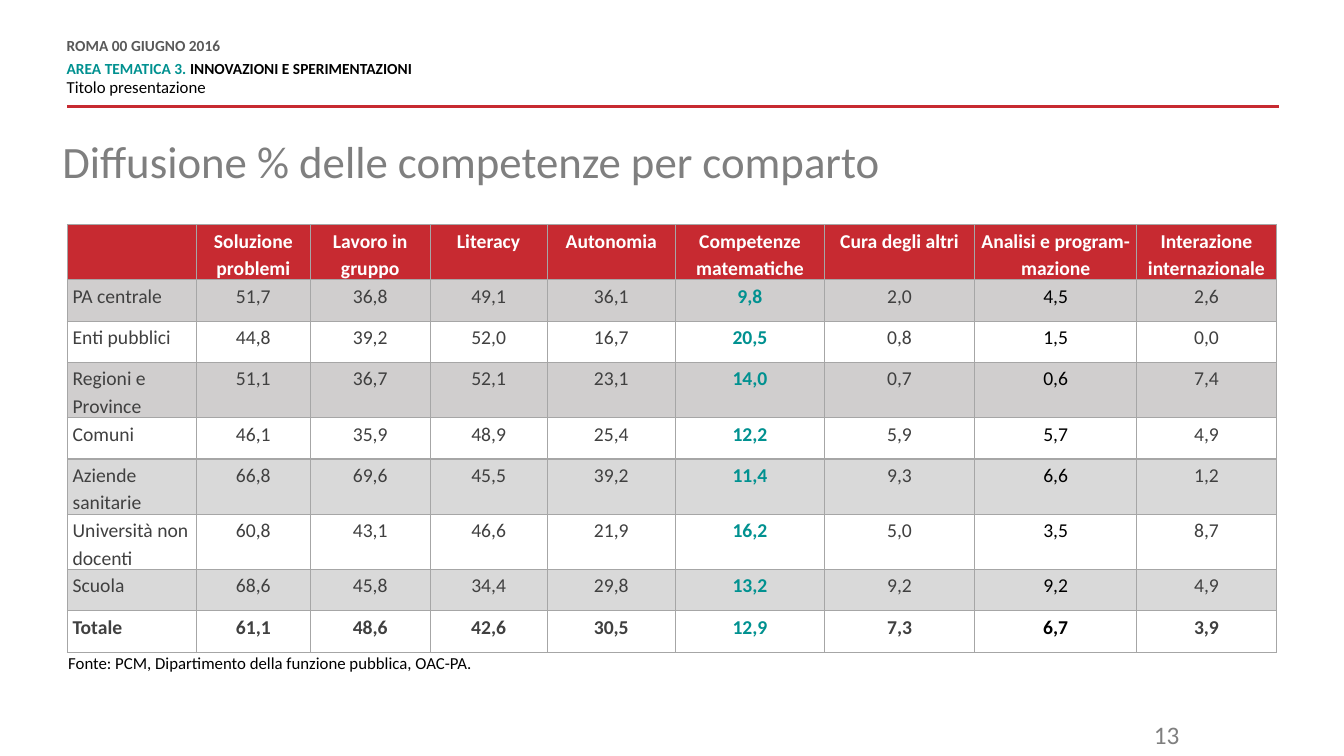
from lxml.etree import SubElement
from pptx import Presentation
from pptx.dml.color import RGBColor
from pptx.enum.shapes import MSO_CONNECTOR
from pptx.enum.text import MSO_ANCHOR, PP_ALIGN
from pptx.oxml.ns import qn
from pptx.util import Cm, Pt

RED = RGBColor(0xC7, 0x2A, 0x31)
TEAL = RGBColor(0x00, 0x91, 0x90)
BLACK = RGBColor(0x00, 0x00, 0x00)
WHITE = RGBColor(0xFF, 0xFF, 0xFF)
DATE_GRAY = RGBColor(0x59, 0x59, 0x59)
TITLE_GRAY = RGBColor(0x7F, 0x7F, 0x7F)
BODY_GRAY = RGBColor(0x40, 0x40, 0x40)
WARM_BAND = RGBColor(0xD0, 0xCE, 0xCE)
COOL_BAND = RGBColor(0xD9, 0xD9, 0xD9)
BORDER = RGBColor(0xA6, 0xA6, 0xA6)

COLUMN_WIDTHS = [3.25, 2.87, 3.02, 2.95, 3.23, 3.76, 3.78, 4.09, 3.51]
ROW_HEIGHT = 1.04
MATH_COLUMN, ANALYSIS_COLUMN = 5, 7
HEADINGS = ["", "Soluzione problemi", "Lavoro in gruppo", "Literacy", "Autonomia",
            "Competenze matematiche", "Cura degli altri",
            "Analisi e program-mazione", "Interazione internazionale"]
SECTORS = [
    ("PA centrale", "51,7 36,8 49,1 36,1 9,8 2,0 4,5 2,6", WARM_BAND),
    ("Enti pubblici", "44,8 39,2 52,0 16,7 20,5 0,8 1,5 0,0", WHITE),
    ("Regioni e Province", "51,1 36,7 52,1 23,1 14,0 0,7 0,6 7,4", WARM_BAND),
    ("Comuni", "46,1 35,9 48,9 25,4 12,2 5,9 5,7 4,9", WHITE),
    ("Aziende sanitarie", "66,8 69,6 45,5 39,2 11,4 9,3 6,6 1,2", COOL_BAND),
    ("Università non docenti", "60,8 43,1 46,6 21,9 16,2 5,0 3,5 8,7", WHITE),
    ("Scuola", "68,6 45,8 34,4 29,8 13,2 9,2 9,2 4,9", COOL_BAND),
    ("Totale", "61,1 48,6 42,6 30,5 12,9 7,3 6,7 3,9", WHITE),
]


class SlideBuilder:
    font_name = "Calibri"

    def __init__(self, page):
        self.page = page

    def add_span(self, para, text, size, color, bold=False):
        span = para.add_run()
        span.text = text
        span.font.name = self.font_name
        span.font.size = Pt(size)
        span.font.bold = bold
        span.font.color.rgb = color

    def text_frame(self, left, top, width, height, inset=True, wrap=True):
        box = self.page.shapes.add_textbox(Cm(left), Cm(top), Cm(width), Cm(height))
        frame = box.text_frame
        frame.word_wrap = wrap
        if not inset:
            frame.margin_left = frame.margin_right = 0
            frame.margin_top = frame.margin_bottom = 0
        return frame

    def rule(self, start, end, top):
        line = self.page.shapes.add_connector(
            MSO_CONNECTOR.STRAIGHT, Cm(start), Cm(top), Cm(end), Cm(top))
        line.line.color.rgb = RED
        line.line.width = Pt(2)
        SubElement(line._element.spPr, qn("a:effectLst"))

    def border(self, cell):
        properties = cell._tc.get_or_add_tcPr()
        for side in ("lnL", "lnR", "lnT", "lnB"):
            edge = SubElement(properties, qn(f"a:{side}"), w=str(Pt(1)))
            fill = SubElement(edge, qn("a:solidFill"))
            SubElement(fill, qn("a:srgbClr"), val=str(BORDER))

    def cell(self, cell, text, fill, color, bold, align):
        self.border(cell)
        cell.fill.solid()
        cell.fill.fore_color.rgb = fill
        cell.margin_left = cell.margin_right = Cm(0.13)
        cell.margin_top, cell.margin_bottom = Cm(0.03), 0
        cell.vertical_anchor = MSO_ANCHOR.TOP
        para = cell.text_frame.paragraphs[0]
        para.alignment = align
        para.line_spacing = 1.15
        if text:
            self.add_span(para, text, 14, color, bold)

    def table(self, left, top):
        row_count = len(SECTORS) + 1
        table = self.page.shapes.add_table(
            row_count, len(HEADINGS), Cm(left), Cm(top),
            Cm(sum(COLUMN_WIDTHS)), Cm(ROW_HEIGHT * row_count)).table
        table.first_row = table.horz_banding = False
        for column, width in zip(table.columns, COLUMN_WIDTHS):
            column.width = Cm(width)
        for row in table.rows:
            row.height = Cm(ROW_HEIGHT)
        for column, heading in enumerate(HEADINGS):
            self.cell(table.cell(0, column), heading, RED, WHITE, True, PP_ALIGN.CENTER)
        accents = {MATH_COLUMN: TEAL, ANALYSIS_COLUMN: BLACK}
        for row, (sector, values, fill) in enumerate(SECTORS, 1):
            for column, text in enumerate([sector, *values.split()]):
                bold = sector == "Totale" or column == MATH_COLUMN
                align = PP_ALIGN.CENTER if column else PP_ALIGN.LEFT
                self.cell(table.cell(row, column), text, fill,
                          accents.get(column, BODY_GRAY), bold, align)

    def heading(self):
        frame = self.text_frame(1.68, 0.99, 21.18, 1.5, inset=False)
        date = frame.paragraphs[0]
        area = frame.add_paragraph()
        subject = frame.add_paragraph()
        for para in frame.paragraphs:
            para.line_spacing = Pt(10.8)
        date.space_after = subject.space_after = Pt(6)
        subject.space_before = Pt(3)
        self.add_span(date, "ROMA 00 GIUGNO 2016", 11, DATE_GRAY, True)
        self.add_span(area, "AREA TEMATICA 3. ", 11, TEAL, True)
        self.add_span(area, "INNOVAZIONI E SPERIMENTAZIONI", 11, BLACK, True)
        self.add_span(subject, "Titolo presentazione", 12, BLACK)

    def title(self, text):
        para = self.text_frame(1.57, 3.53, 30.76, 2.87, inset=False).paragraphs[0]
        para.line_spacing = 0.9
        self.add_span(para, text, 32, TITLE_GRAY)

    def page_number(self, text):
        para = self.text_frame(22.35, 18.01, 7.62, 1.02).paragraphs[0]
        para.alignment = PP_ALIGN.RIGHT
        self.add_span(para, text, 18, TITLE_GRAY)

    def source(self, text):
        frame = self.text_frame(1.47, 16.33, 11, 0.76, wrap=False)
        self.add_span(frame.paragraphs[0], text, 12, BLACK)


def main():
    deck = Presentation()
    deck.slide_width, deck.slide_height = Cm(33.87), Cm(19.05)
    builder = SlideBuilder(deck.slides.add_slide(deck.slide_layouts[6]))
    builder.rule(32.23, 1.68, 2.69)
    builder.heading()
    builder.title("Diffusione % delle competenze per comparto")
    builder.page_number("13")
    builder.table(1.7, 5.66)
    builder.source("Fonte: PCM, Dipartimento della funzione pubblica, OAC-PA.")
    deck.save("out.pptx")


if __name__ == "__main__":
    main()
